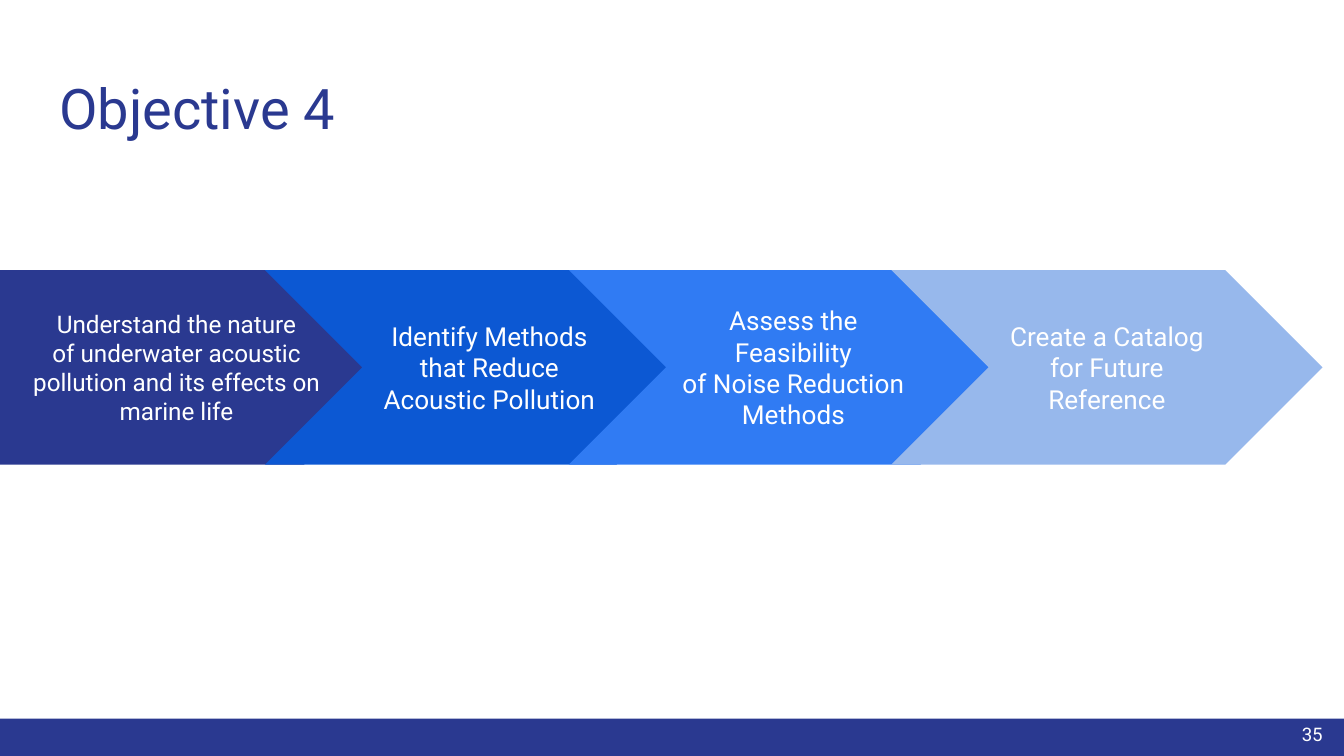
from pptx import Presentation
from pptx.dml.color import RGBColor
from pptx.enum.shapes import MSO_SHAPE
from pptx.enum.text import MSO_ANCHOR, MSO_AUTO_SIZE, PP_ALIGN
from pptx.util import Pt

FONT = "Roboto"
NAVY, WHITE = "2A3990", "FFFFFF"
TITLE = "Objective 4"
PAGE = "35"
STEP_TOP, STEP_HEIGHT = 144.7, 104.2

# left, width, fill, text size, paragraphs
STEPS = [
    (0, 215, NAVY, 13,
     ["Understand the nature",
      "of underwater acoustic pollution and its effects on marine life"]),
    (142, 240.5, "0C58D3", 14,
     ["Identify Methods that Reduce", "Acoustic Pollution"]),
    (304.8, 240.5, "307BF3", 14,
     ["Assess the Feasibility", "of Noise Reduction Methods"]),
    (477.5, 231, "97B8EC", 14,
     ["Create a Catalog for Future Reference"]),
]


def rgb(color):
    return RGBColor.from_string(color)


def write(sp, lines, size, color, align, anchor):
    tf = sp.text_frame
    tf.text = "\n".join(lines)
    tf.word_wrap = True
    tf.auto_size = MSO_AUTO_SIZE.NONE
    tf.vertical_anchor = anchor
    tf.margin_left = tf.margin_right = tf.margin_top = tf.margin_bottom = Pt(7.2)
    for p in tf.paragraphs:
        p.alignment = align
        for r in p.runs:
            r.font.name = FONT
            r.font.size = Pt(size)
            r.font.color.rgb = rgb(color)


def add_block(s, kind, left, top, width, height, color):
    sp = s.shapes.add_shape(kind, Pt(left), Pt(top), Pt(width), Pt(height))
    sp.shadow.inherit = False
    sp.fill.solid()
    sp.fill.fore_color.rgb = rgb(color)
    sp.line.fill.background()
    return sp


prs = Presentation()
prs.slide_width, prs.slide_height = Pt(720), Pt(405)
s = prs.slides.add_slide(prs.slide_layouts[5])

add_block(s, MSO_SHAPE.RECTANGLE, 0, 385, 720, 20, NAVY)

title = s.shapes.title
title.left, title.top, title.width, title.height = Pt(24.5), Pt(32.4), Pt(671), Pt(47.5)
write(title, [TITLE], 30, NAVY, PP_ALIGN.LEFT, MSO_ANCHOR.TOP)

for i, (left, width, color, size, lines) in enumerate(STEPS):
    kind = MSO_SHAPE.CHEVRON if i else MSO_SHAPE.PENTAGON
    step = add_block(s, kind, left, STEP_TOP, width, STEP_HEIGHT, color)
    step.adjustments[0] = 0.5
    write(step, lines, size, WHITE, PP_ALIGN.CENTER, MSO_ANCHOR.MIDDLE)

number = s.shapes.add_textbox(Pt(672.5), Pt(378), Pt(43.2), Pt(31))
write(number, [PAGE], 10, WHITE, PP_ALIGN.RIGHT, MSO_ANCHOR.MIDDLE)

prs.save("out.pptx")
